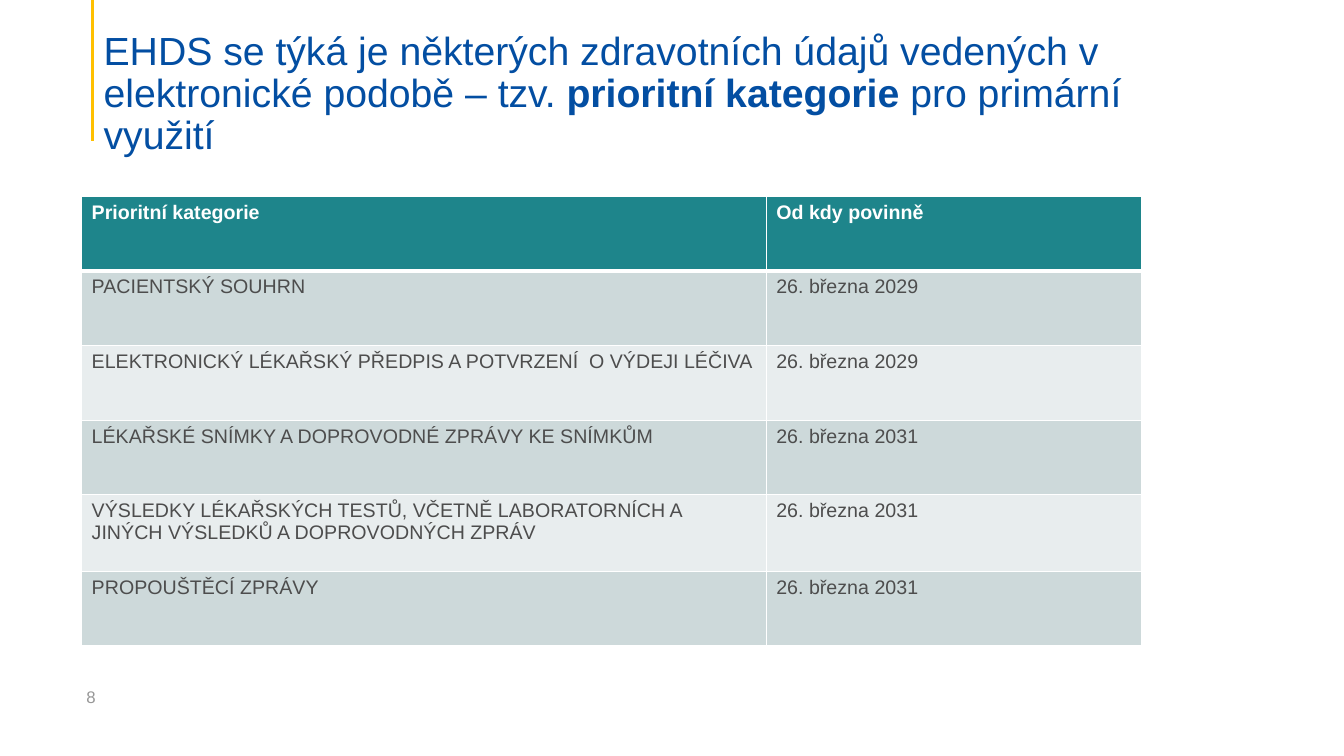
from lxml import etree
from pptx import Presentation
from pptx.dml.color import RGBColor
from pptx.enum.shapes import MSO_CONNECTOR
from pptx.enum.text import MSO_ANCHOR
from pptx.oxml.ns import qn
from pptx.util import Emu, Pt

STRAIGHT = MSO_CONNECTOR.STRAIGHT
MIDDLE, BOTTOM = MSO_ANCHOR.MIDDLE, MSO_ANCHOR.BOTTOM
EMU_PER_PX = 9144

HEADER = ("Prioritní kategorie", "Od kdy povinně")
CATEGORIES = [
    ("PACIENTSKÝ SOUHRN", "26. března 2029"),
    ("ELEKTRONICKÝ LÉKAŘSKÝ PŘEDPIS A POTVRZENÍ  O VÝDEJI LÉČIVA", "26. března 2029"),
    ("LÉKAŘSKÉ SNÍMKY A DOPROVODNÉ ZPRÁVY KE SNÍMKŮM", "26. března 2031"),
    ("VÝSLEDKY LÉKAŘSKÝCH TESTŮ, VČETNĚ LABORATORNÍCH A JINÝCH VÝSLEDKŮ "
     "A DOPROVODNÝCH ZPRÁV", "26. března 2031"),
    ("PROPOUŠTĚCÍ ZPRÁVY", "26. března 2031"),
]
COLUMN_WIDTHS = (679, 372)
ROW_HEIGHTS = (74, 74, 74, 74, 76, 74)


def px(length):
    return Emu(length * EMU_PER_PX)


def color(value):
    return RGBColor.from_string(value)


def add_span(para, text, size=14, ink="4D4D4D", bold=False, font="Arial"):
    span = para.add_run()
    span.text = text
    span.font.name = font
    span.font.size = Pt(size)
    span.font.bold = bold
    span.font.color.rgb = color(ink)


def set_borders(cell, top, bottom, ink="FFFFFF"):
    properties = cell._tc.get_or_add_tcPr()
    sides = (("a:lnL", 1), ("a:lnR", 1), ("a:lnT", top), ("a:lnB", bottom))
    for position, (side, width) in enumerate(sides):
        border = etree.Element(qn(side), w=str(Pt(width)))
        fill = etree.SubElement(border, qn("a:solidFill"))
        etree.SubElement(fill, qn("a:srgbClr"), val=ink)
        properties.insert(position, border)


class SlideBuilder:
    """Draws styled elements on the current slide."""

    blue, yellow, teal, gray = "034EA2", "FFC000", "1E858B", "979797"
    bands = ("E8EDEE", "CDD9DA")

    def __init__(self, page):
        self.page = page

    def line(self, start, end, ink, width):
        line = self.page.shapes.add_connector(STRAIGHT, *map(px, start + end))
        line.line.color.rgb = color(ink)
        line.line.width = Pt(width)
        etree.SubElement(line._element.spPr, qn("a:effectLst"))

    def text(self, area, spans, anchor, spacing=1.0, bottom_inset=5, **style):
        box = self.page.shapes.add_textbox(*map(px, area))
        frame = box.text_frame
        frame.word_wrap = True
        frame.vertical_anchor = anchor
        frame.margin_bottom = px(bottom_inset)
        para = frame.paragraphs[0]
        para.line_spacing = spacing
        for text, bold in spans:
            add_span(para, text, bold=bold, **style)

    def table(self, left, top, widths, heights, rows):
        table = self.page.shapes.add_table(
            len(rows), len(widths), px(left), px(top),
            px(sum(widths)), px(sum(heights))).table
        for column, width in zip(table.columns, widths):
            column.width = px(width)
        for index, (row, height, texts) in enumerate(zip(table.rows, heights, rows)):
            row.height = px(height)
            is_header = index == 0
            for cell, text in zip(row.cells, texts):
                cell.fill.solid()
                cell.fill.fore_color.rgb = color(
                    self.teal if is_header else self.bands[index % 2])
                set_borders(cell, top=3 if index == 1 else 1,
                            bottom=3 if is_header else 1)
                add_span(cell.text_frame.paragraphs[0], text, bold=is_header,
                         ink="FFFFFF" if is_header else "4D4D4D")


def main():
    deck = Presentation()
    deck.slide_width, deck.slide_height = px(1333), px(750)
    builder = SlideBuilder(deck.slides.add_slide(deck.slide_layouts[6]))
    builder.line((92, 0), (92, 140), builder.yellow, 2.25)
    builder.text((76, 671, 300, 40), [("8", False)], MIDDLE,
                 size=12, ink=builder.gray)
    builder.text(
        (93, 71, 1140, 86),
        [("EHDS se týká je některých zdravotních údajů vedených v "
          "elektronické podobě – tzv. ", False),
         ("prioritní kategorie ", True),
         ("pro primární využití", False)],
        BOTTOM, spacing=0.9, bottom_inset=0, size=28, ink=builder.blue)
    builder.table(81, 195, COLUMN_WIDTHS, ROW_HEIGHTS, [HEADER] + CATEGORIES)
    deck.save("out.pptx")


if __name__ == "__main__":
    main()
